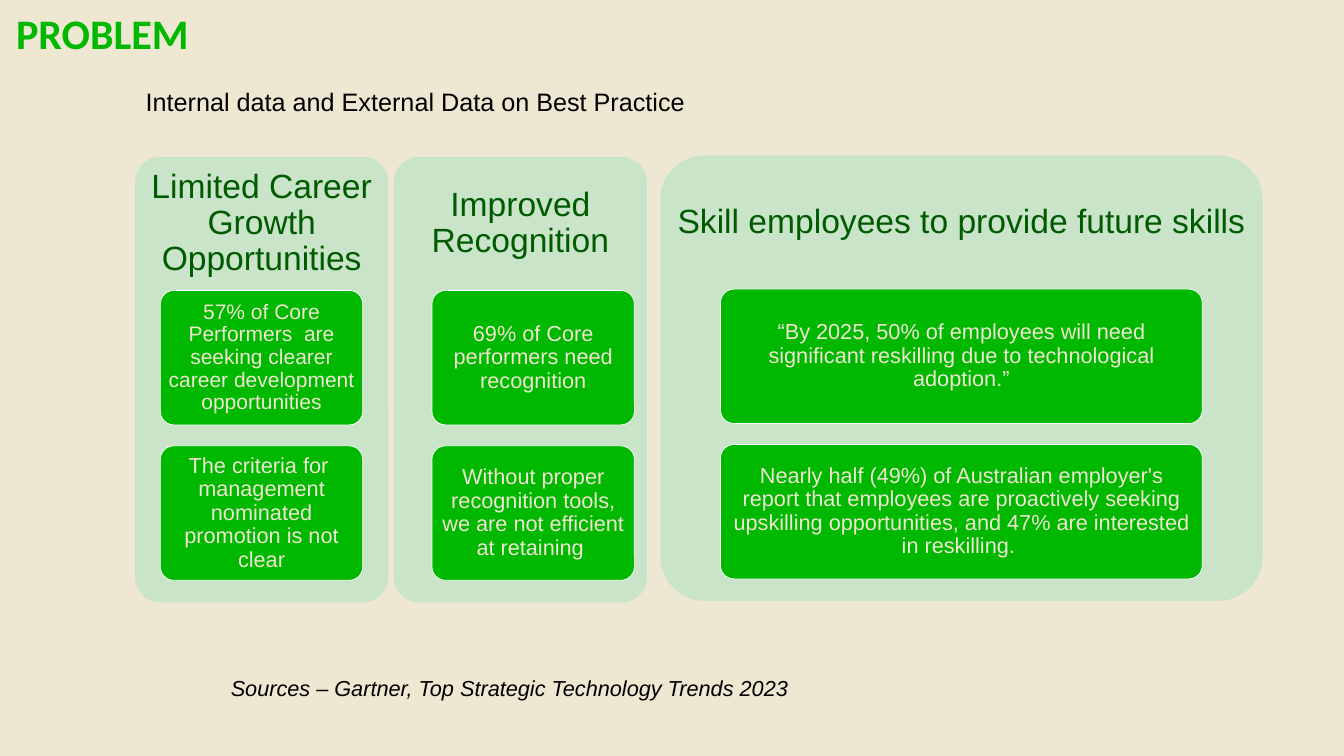
import pptx
import pptx.util
import pptx.dml.color
import pptx.enum.shapes
import pptx.enum.text

Pt = pptx.util.Pt
ALIGN = pptx.enum.text.PP_ALIGN
ANCHOR = pptx.enum.text.MSO_ANCHOR
ROUNDED = pptx.enum.shapes.MSO_SHAPE.ROUNDED_RECTANGLE
GREEN, DARK_GREEN, PALE_GREEN, CREAM = "00B800", "005B00", "CAE4CA", "EEE7D2"


def color(hex_string):
    return pptx.dml.color.RGBColor.from_string(hex_string)


def write(shape, text, size, ink, align=ALIGN.LEFT, anchor=ANCHOR.TOP,
          inset=(7.2, 3.6), spacing=1.0, font="Arial"):
    frame = shape.text_frame
    frame.text = text
    frame.word_wrap = True
    frame.auto_size = pptx.enum.text.MSO_AUTO_SIZE.NONE
    frame.vertical_anchor = anchor
    frame.margin_left = frame.margin_right = Pt(inset[0])
    frame.margin_top = frame.margin_bottom = Pt(inset[1])
    for paragraph in frame.paragraphs:
        paragraph.alignment = align
        paragraph.line_spacing = spacing
        paragraph.space_before = Pt(0)
        for run in paragraph.runs:
            run.font.name = font
            run.font.size = Pt(size)
            run.font.color.rgb = color(ink)


deck = pptx.Presentation()
deck.slide_width, deck.slide_height = Pt(1919.5), Pt(1080)
slide = deck.slides.add_slide(deck.slide_layouts[5])
slide.background.fill.solid()
slide.background.fill.fore_color.rgb = color(CREAM)

title = slide.shapes.title
title.left, title.top, title.width, title.height = Pt(23), Pt(18.7), Pt(1868), Pt(91)
write(title, "PROBLEM", 60, GREEN, inset=(0, 0), spacing=0.9, font="Calibri")
title.text_frame.paragraphs[0].runs[0].font.bold = True

subtitle = slide.shapes.add_textbox(Pt(201), Pt(119.5), Pt(1197), Pt(51))
write(subtitle, "Internal data and External Data on Best Practice", 36, "000000")

PANEL_HEIGHT, HEADING_HEIGHT = 636.5, 191
CARD_HEIGHT, CARD_PITCH = 192, 222
themes = [
    ("Limited Career Growth Opportunities", 193, 224, 361.5, 229, 289, [
        ("57% of Core Performers  are seeking clearer career development opportunities", 30),
        ("The criteria for \nmanagement nominated promotion is not clear", 31)]),
    ("Improved Recognition", 562.5, 224, 361.5, 617, 289, [
        ("69% of Core performers need recognition", 31),
        ("Without proper recognition tools, we are not efficient at retaining ", 31)]),
    ("Skill employees to provide future skills", 943, 222, 860.5, 1029, 688, [
        ("“By 2025, 50% of employees will need significant reskilling due to "
         "technological adoption.”", 31),
        ("Nearly half (49%) of Australian employer's report that employees are proactively "
         "seeking upskilling opportunities, and 47% are interested in reskilling. ", 31)]),
]

for heading, left, top, width, card_left, card_width, findings in themes:
    panel = slide.shapes.add_shape(ROUNDED, Pt(left), Pt(top), Pt(width), Pt(PANEL_HEIGHT))
    panel.adjustments[0] = 0.1
    panel.shadow.inherit = False
    panel.fill.solid()
    panel.fill.fore_color.rgb = color(PALE_GREEN)
    panel.line.fill.background()

    heading_box = slide.shapes.add_textbox(Pt(left), Pt(top), Pt(width), Pt(HEADING_HEIGHT))
    write(heading_box, heading, 48, DARK_GREEN, ALIGN.CENTER, ANCHOR.MIDDLE, (19, 19), 0.9)

    for row, (finding, size) in enumerate(findings):
        card_top = top + HEADING_HEIGHT + row * CARD_PITCH
        card = slide.shapes.add_shape(
            ROUNDED, Pt(card_left), Pt(card_top), Pt(card_width), Pt(CARD_HEIGHT))
        card.adjustments[0] = 0.1
        card.shadow.inherit = False
        card.fill.solid()
        card.fill.fore_color.rgb = color(GREEN)
        card.line.color.rgb = color("FFFFFF")
        card.line.width = Pt(1)
        write(card, finding, size, CREAM, ALIGN.CENTER, ANCHOR.MIDDLE, (6.3, 4.3), 0.9)

sources = slide.shapes.add_textbox(Pt(322.5), Pt(960.5), Pt(978.5), Pt(45))
write(sources, "Sources – Gartner, Top Strategic Technology Trends 2023", 31, "000000")
sources.text_frame.paragraphs[0].runs[0].font.italic = True

deck.save("out.pptx")
